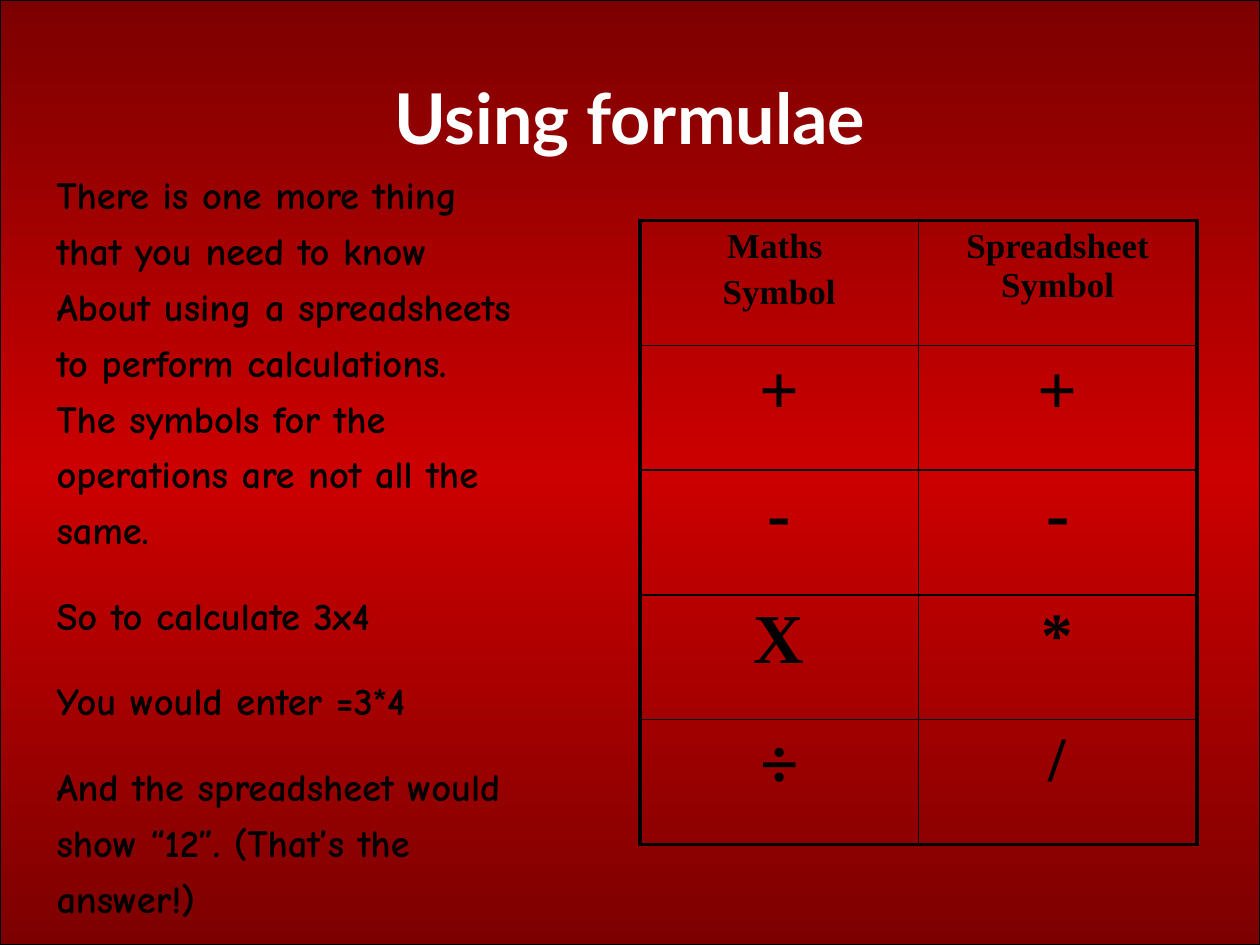
from copy import deepcopy
from dataclasses import dataclass

from lxml import etree
from pptx import Presentation
from pptx.dml.color import RGBColor
from pptx.enum import shapes, text
from pptx.oxml.ns import qn
from pptx.util import Cm, Pt


@dataclass(frozen=True)
class Theme:
    black: str = "000000"
    white: str = "FFFFFF"
    dark: str = "7D0000"
    red: str = "CC0000"
    head: str = "Lato"
    body: str = "Comic Neue"
    grid: str = "Times New Roman"
    title: float = 40
    prose: float = 22
    label: float = 20
    sign: float = 40
    small: float = 36
    thin: float = 1
    thick: float = 2.25


@dataclass(frozen=True)
class Style:
    font: str
    size: float
    color: str
    align: text.PP_ALIGN
    bold: bool = True


@dataclass(frozen=True)
class Entry:
    lines: tuple[str, ...]
    size: float
    bold: bool = True


T = Theme()
MID, LEFT = text.PP_ALIGN.CENTER, text.PP_ALIGN.LEFT

# Each group of lines is set apart from the one before it.
PROSE = (
    (
        "There is one more thing",
        "that you need to know",
        "About using a spreadsheets",
        "to perform calculations.",
        "The symbols for the",
        "operations are not all the",
        "same.",
    ),
    ("So to calculate 3x4",),
    ("You would enter =3*4",),
    ("And the spreadsheet would", "show “12”. (That’s the", "answer!)"),
)

ROWS = (
    (Entry(("Maths ", "Symbol"), T.label), Entry(("Spreadsheet Symbol",), T.label)),
    (Entry(("+",), T.sign), Entry(("+",), T.sign)),
    (Entry(("-",), T.sign), Entry(("-",), T.sign)),
    (Entry(("X",), T.sign), Entry(("*",), T.small)),
    (Entry(("÷",), T.sign), Entry(("/",), T.small)),
)


def rgb(code: str) -> RGBColor:
    return RGBColor.from_string(code)


def write(frame, lines: tuple[str, ...], style: Style, gap: float = 0) -> None:
    """Fill a frame, one paragraph a line, with gap points between lines."""
    frame.text = "\n".join(lines)
    for i, par in enumerate(frame.paragraphs):
        par.alignment = style.align
        par.space_before = Pt(gap if i else 0)
        for run in par.runs:
            run.font.name = style.font
            run.font.size = Pt(style.size)
            run.font.bold = style.bold
            run.font.color.rgb = rgb(style.color)


def add_box(slide, left, top, width, height, anchor):
    frame = slide.shapes.add_textbox(left, top, width, height).text_frame
    frame.word_wrap = True
    frame.vertical_anchor = anchor
    return frame


def add_ground(slide, width, height) -> None:
    rect = slide.shapes.add_shape(shapes.MSO_SHAPE.RECTANGLE, 0, 0, width, height)
    rect.shadow.inherit = False
    rect.line.color.rgb = rgb(T.black)
    rect.line.width = Pt(0.75)
    rect.fill.gradient()
    rect.fill.gradient_angle = 90
    stops = rect._element.spPr.find(qn("a:gradFill")).find(qn("a:gsLst"))
    stops.insert(1, deepcopy(stops[0]))
    marks = ((0, T.dark), (0.5, T.red), (1, T.dark))
    for stop, (place, color) in zip(rect.fill.gradient_stops, marks):
        stop.position = place
        stop.color.rgb = rgb(color)


def add_prose(slide) -> None:
    frame = add_box(slide, Cm(0.89), Cm(3.33), Cm(11.4), Cm(15.01),
                    text.MSO_ANCHOR.TOP)
    lines = tuple(line for group in PROSE for line in group)
    write(frame, lines, Style(T.body, T.prose, T.black, LEFT), 5.5)
    start = 0
    for group in PROSE[:-1]:
        start += len(group)
        frame.paragraphs[start].space_before = Pt(22.5)


def set_edges(cell, widths: dict[str, float]) -> None:
    """Draw cell borders; they must come before the fill in the XML."""
    props = cell._tc.get_or_add_tcPr()
    for i, (side, width) in enumerate(widths.items()):
        line = etree.Element(qn(f"a:ln{side}"), w=str(Pt(width)))
        fill = etree.SubElement(line, qn("a:solidFill"))
        etree.SubElement(fill, qn("a:srgbClr"), val=T.black)
        props.insert(i, line)


def add_grid(slide) -> None:
    rows, cols = len(ROWS), len(ROWS[0])
    table = slide.shapes.add_table(
        rows, cols, Cm(12.9), Cm(4.45), Cm(11.23), Cm(12.57)).table
    table.first_row = table.horz_banding = False
    for r, row in enumerate(ROWS):
        for c, entry in enumerate(row):
            cell = table.cell(r, c)
            cell.fill.background()
            outer = {"L": c == 0, "R": c == cols - 1,
                     "T": r == 0, "B": r == rows - 1}
            set_edges(cell, {side: T.thick if edge else T.thin
                             for side, edge in outer.items()})
            style = Style(T.grid, entry.size, T.black, MID, entry.bold)
            write(cell.text_frame, entry.lines, style, 4)


def main() -> None:
    deck = Presentation()
    deck.slide_width, deck.slide_height = Cm(25.4), Cm(19.05)
    slide = deck.slides.add_slide(deck.slide_layouts[6])
    add_ground(slide, deck.slide_width, deck.slide_height)
    title = add_box(slide, Cm(1.27), Cm(0.76), Cm(22.86), Cm(3.18),
                    text.MSO_ANCHOR.MIDDLE)
    write(title, ("Using formulae",), Style(T.head, T.title, T.white, MID))
    add_prose(slide)
    add_grid(slide)
    deck.save("out.pptx")


if __name__ == "__main__":
    main()
